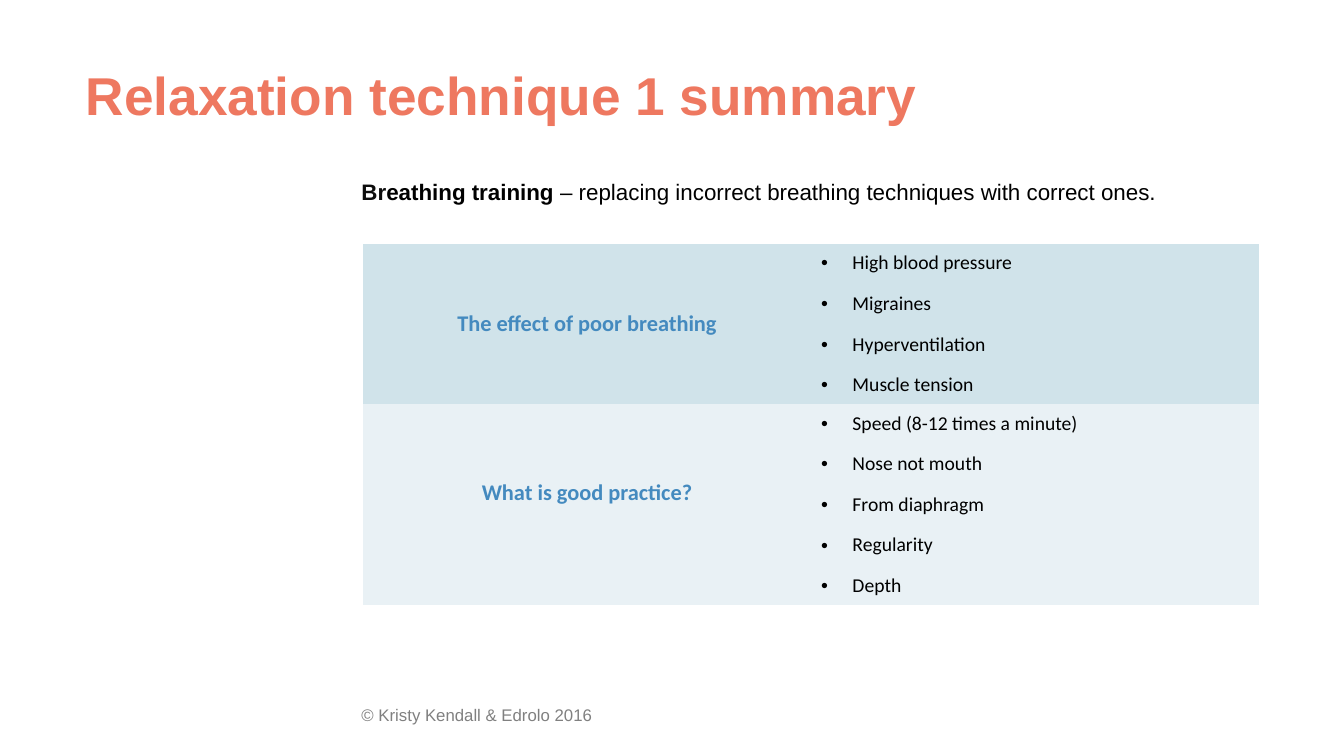
import pptx
import pptx.util
import pptx.dml.color
import pptx.enum.text
import pptx.oxml.ns
import lxml.etree

Cm, Pt = pptx.util.Cm, pptx.util.Pt
RGB = pptx.dml.color.RGBColor.from_string
ANCHOR = pptx.enum.text.MSO_ANCHOR
ALIGN = pptx.enum.text.PP_ALIGN

THEME = {
    "title": {"name": "Arial", "size": Pt(38), "bold": True, "color": "EE7860"},
    "term start": {"name": "Arial", "size": Pt(16), "bold": True, "color": "0D0D0D"},
    "term": {"name": "Arial", "size": Pt(16), "bold": True, "color": "000000"},
    "definition": {"name": "Arial", "size": Pt(16), "bold": False, "color": "000000"},
    "copyright": {"name": "Arial", "size": Pt(12), "bold": False, "color": "808080"},
    "heading": {"name": "Calibri", "size": Pt(16), "bold": True, "color": "448ABF"},
    "bullet": {"name": "Calibri", "size": Pt(14), "bold": False, "color": "000000"},
    "row fills": ["D0E3EA", "E9F1F5"],
}
NO_STYLE_NO_GRID = "{2D5ABB26-0587-4C30-8999-92F81FD0307C}"


def add_span(para, text, style):
    span = para.add_run()
    span.text = text
    for name, value in THEME[style].items():
        if name == "color":
            span.font.color.rgb = RGB(value)
        else:
            setattr(span.font, name, value)


def set_frame(frame, **values):
    for name, value in values.items():
        setattr(frame, name, value)


# Slide
deck = pptx.Presentation()
deck.slide_width, deck.slide_height = Cm(33.87), Cm(19.05)
page = deck.slides.add_slide(deck.slide_layouts[5])

# Title
title = page.shapes.title
title.left, title.top, title.width, title.height = Cm(2.03), Cm(1.3), Cm(22.86), Cm(2.16)
inset = Cm(0.13)
set_frame(title.text_frame, margin_left=inset, margin_right=inset,
          margin_top=inset, margin_bottom=inset, word_wrap=True,
          vertical_anchor=ANCHOR.MIDDLE, auto_size=pptx.enum.text.MSO_AUTO_SIZE.NONE)
para = title.text_frame.paragraphs[0]
para.alignment = ALIGN.LEFT
add_span(para, "Relaxation technique 1 summary", "title")

# Definition and copyright line
text_boxes = [
    (4.24, 24.31, 1.42, 0.24, [
        ("Br", "term start"),
        ("eathing training ", "term"),
        ("– replacing incorrect breathing techniques with correct ones.", "definition"),
    ]),
    (17.63, 11.43, 1.02, 0.13, [("© Kristy Kendall & Edrolo 2016", "copyright")]),
]
for top, width, height, margin_top, spans in text_boxes:
    box = page.shapes.add_textbox(Cm(8.86), Cm(top), Cm(width), Cm(height))
    set_frame(box.text_frame, word_wrap=True, margin_top=Cm(margin_top))
    for text, style in spans:
        add_span(box.text_frame.paragraphs[0], text, style)

# Summary table: heading, bottom margin of heading cell, row height, points
rows = [
    ("The effect of poor breathing", 0.13, 4.03,
     ["High blood pressure", "Migraines", "Hyperventilation", "Muscle tension"]),
    ("What is good practice?", 0.73, 5.07,
     ["Speed (8-12 times a minute)", "Nose not mouth", "From diaphragm",
      "Regularity", "Depth"]),
]
table = page.shapes.add_table(len(rows), 2, Cm(9.15), Cm(6.15), Cm(22.58), Cm(9.1)).table
table.first_row = table.horz_banding = False
table._tbl.tblPr.find(pptx.oxml.ns.qn("a:tableStyleId")).text = NO_STYLE_NO_GRID

for index, (heading, margin_bottom, height, points) in enumerate(rows):
    table.rows[index].height = Cm(height)
    heading_cell, points_cell = table.rows[index].cells
    for cell in (heading_cell, points_cell):
        cell.vertical_anchor = ANCHOR.MIDDLE
        cell.fill.solid()
        cell.fill.fore_color.rgb = RGB(THEME["row fills"][index])

    heading_cell.margin_bottom = Cm(margin_bottom)
    para = heading_cell.text_frame.paragraphs[0]
    para.alignment = ALIGN.CENTER
    add_span(para, heading, "heading")

    frame = points_cell.text_frame
    for number, point in enumerate(points):
        para = frame.add_paragraph() if number else frame.paragraphs[0]
        para.space_after = Pt(12)
        properties = para._p.get_or_add_pPr()
        properties.set("marL", str(Cm(0.79)))
        properties.set("indent", str(-Cm(0.79)))
        for tag, name, value in (("a:buFont", "typeface", "Arial"), ("a:buChar", "char", "•")):
            lxml.etree.SubElement(properties, pptx.oxml.ns.qn(tag)).set(name, value)
        add_span(para, point, "bullet")

deck.save("out.pptx")
